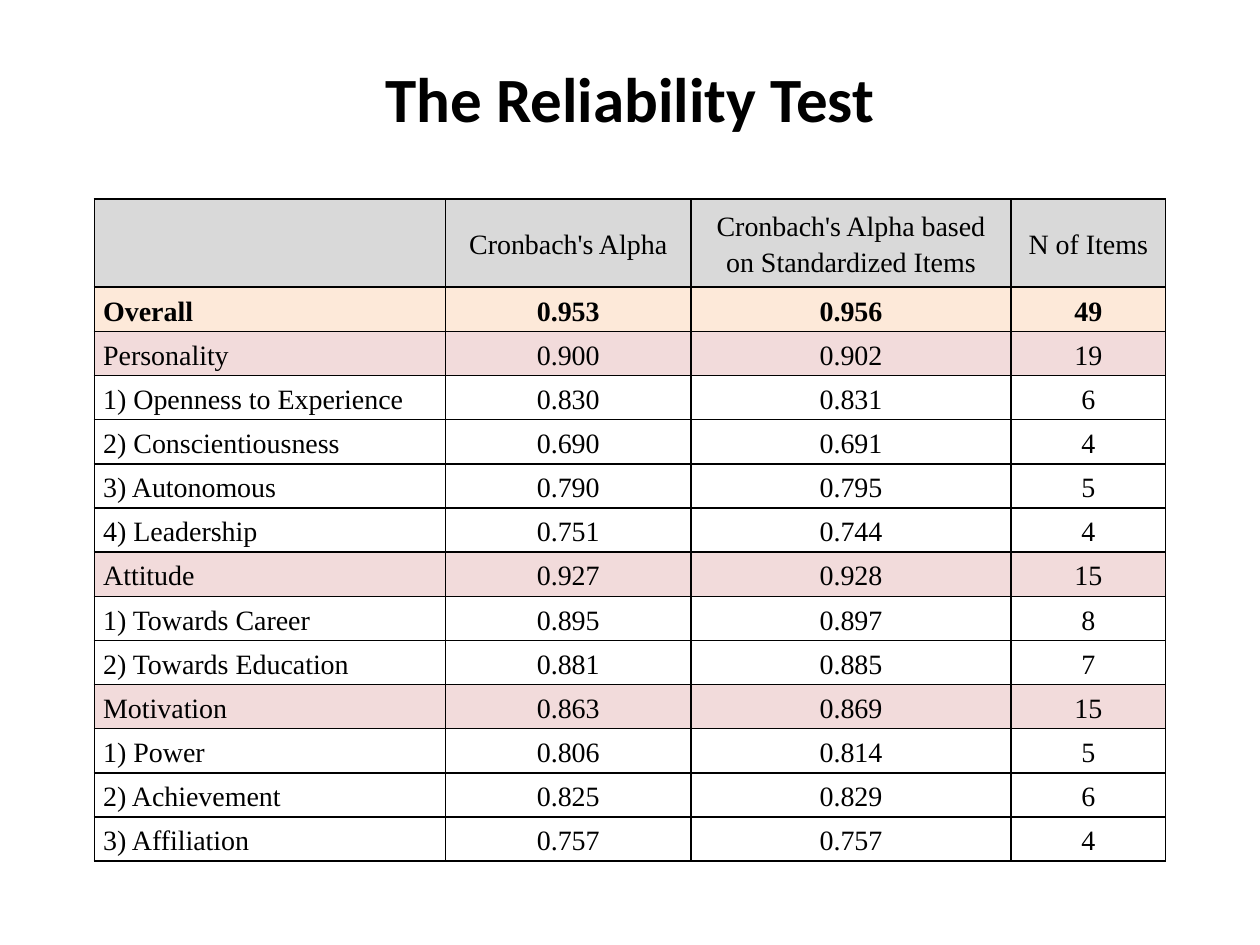
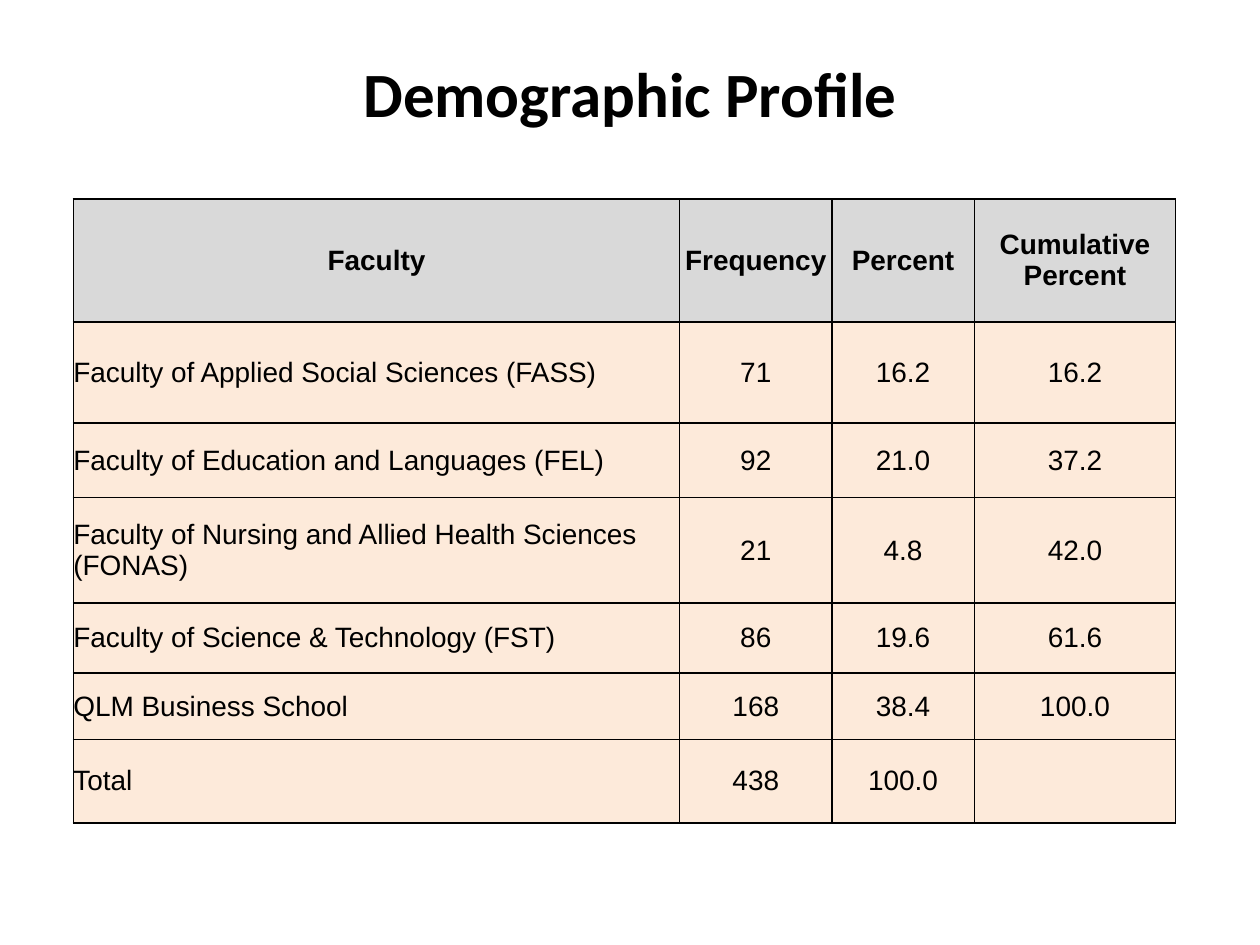
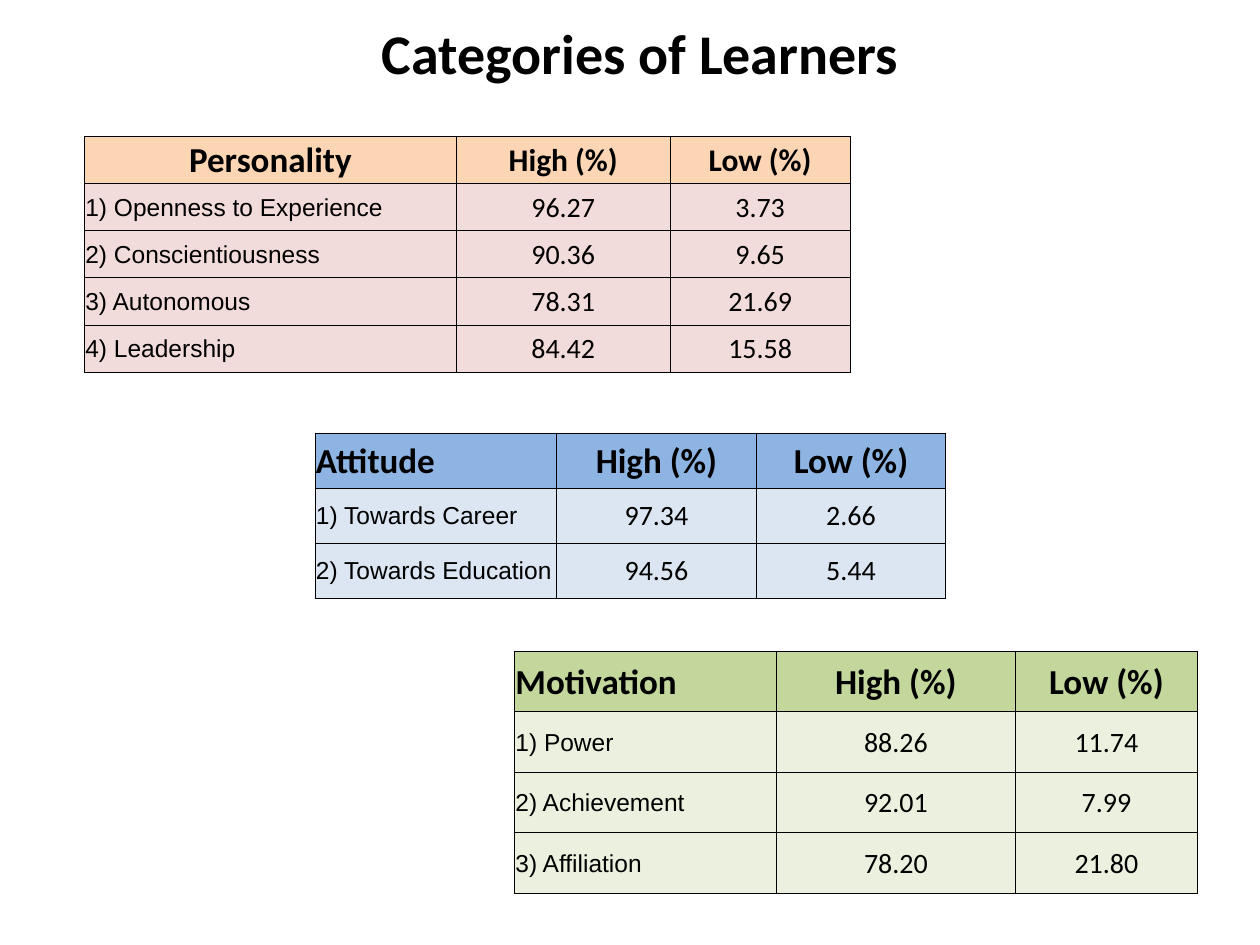
from dataclasses import dataclass

from lxml.etree import SubElement
from pptx import Presentation
from pptx.dml.color import RGBColor
from pptx.enum.text import MSO_ANCHOR as Anchor, PP_ALIGN as Align
from pptx.oxml.ns import qn
from pptx.util import Cm, Pt


@dataclass(frozen=True)
class Theme:
    ink: str = "000000"
    header_grey: str = "D9D9D9"
    overall: str = "FDE9D9"
    construct: str = "F2DBDB"
    faculty: str = "FDEADA"
    personality: tuple = ("FCD5B5", "F2DCDB")
    attitude: tuple = ("8EB4E3", "DCE6F2")
    motivation: tuple = ("C3D69B", "EBF1DE")
    sans: str = "Calibri"
    grotesque: str = "Arial"
    serif: str = "Times New Roman"
    title: int = 36
    compact_title: int = 32
    large: int = 20
    medium: int = 18
    body: int = 16
    small: int = 14


THEME = Theme()


@dataclass(frozen=True)
class TextStyle:
    font: str
    size: int
    bold: bool = False
    align: Align = Align.CENTER


@dataclass(frozen=True)
class TableLook:
    corner: TextStyle
    heading: TextStyle
    label: TextStyle
    value: TextStyle
    margins: tuple
    border: float
    line_spacing: float = 1.0

    def style_at(self, row, column):
        if row == 0:
            return self.heading if column else self.corner
        return self.value if column else self.label


def category_look(heading_size, corner_align):
    return TableLook(
        corner=TextStyle(THEME.sans, THEME.large, True, corner_align),
        heading=TextStyle(THEME.sans, heading_size, True),
        label=TextStyle(THEME.grotesque, THEME.small, align=Align.LEFT),
        value=TextStyle(THEME.sans, THEME.body),
        margins=(0.02, 0.02, 0.02, 0),
        border=0.5,
    )


SERIF_VALUE = TextStyle(THEME.serif, THEME.body)
RELIABILITY_LOOK = TableLook(
    corner=SERIF_VALUE,
    heading=SERIF_VALUE,
    label=TextStyle(THEME.serif, THEME.body, align=Align.LEFT),
    value=SERIF_VALUE,
    margins=(0.18, 0, 0.18, 0),
    border=1,
    line_spacing=1.15,
)

FACULTY_HEADING = TextStyle(THEME.grotesque, THEME.body, True)
FACULTY_LOOK = TableLook(
    corner=FACULTY_HEADING,
    heading=FACULTY_HEADING,
    label=TextStyle(THEME.grotesque, THEME.body, align=Align.LEFT),
    value=TextStyle(THEME.grotesque, THEME.body),
    margins=(0, 0, 0, 0),
    border=1,
)

RELIABILITY = [
    ("", "Cronbach's Alpha", "Cronbach's Alpha based on Standardized Items", "N of Items"),
    ("Overall", "0.953", "0.956", "49"),
    ("Personality", "0.900", "0.902", "19"),
    ("1) Openness to Experience", "0.830", "0.831", "6"),
    ("2) Conscientiousness", "0.690", "0.691", "4"),
    ("3) Autonomous", "0.790", "0.795", "5"),
    ("4) Leadership", "0.751", "0.744", "4"),
    ("Attitude", "0.927", "0.928", "15"),
    ("1) Towards Career", "0.895", "0.897", "8"),
    ("2) Towards Education", "0.881", "0.885", "7"),
    ("Motivation", "0.863", "0.869", "15"),
    ("1) Power", "0.806", "0.814", "5"),
    ("2) Achievement", "0.825", "0.829", "6"),
    ("3) Affiliation", "0.757", "0.757", "4"),
]

RELIABILITY_FILLS = {
    "": THEME.header_grey,
    "Overall": THEME.overall,
    "Personality": THEME.construct,
    "Attitude": THEME.construct,
    "Motivation": THEME.construct,
}

FACULTIES = [
    ("Faculty", "Frequency", "Percent", "Cumulative Percent"),
    ("Faculty of Applied Social Sciences (FASS)", "71", "16.2", "16.2"),
    ("Faculty of Education and Languages (FEL)", "92", "21.0", "37.2"),
    ("Faculty of Nursing and Allied Health Sciences (FONAS)", "21", "4.8", "42.0"),
    ("Faculty of Science & Technology (FST)", "86", "19.6", "61.6"),
    ("QLM Business School", "168", "38.4", "100.0"),
    ("Total", "438", "100.0", ""),
]

PERSONALITY = [
    ("1) Openness to Experience", "96.27", "3.73"),
    ("2) Conscientiousness", "90.36", "9.65"),
    ("3) Autonomous", "78.31", "21.69"),
    ("4) Leadership", "84.42", "15.58"),
]
MOTIVATION = [
    ("1) Power", "88.26", "11.74"),
    ("2) Achievement", "92.01", "7.99"),
    ("3) Affiliation", "78.20", "21.80"),
]
ATTITUDE = [
    ("1) Towards Career", "97.34", "2.66"),
    ("2) Towards Education", "94.56", "5.44"),
]


def write(paragraph, text, style, bold=False):
    paragraph.alignment = style.align
    if not text:
        return
    run = paragraph.add_run()
    run.text = text
    run.font.name = style.font
    run.font.size = Pt(style.size)
    run.font.bold = style.bold or bold
    run.font.color.rgb = RGBColor.from_string(THEME.ink)


def add_titled_slide(deck, title, left, top, height, size):
    slide = deck.slides.add_slide(deck.slide_layouts[5])
    heading = slide.shapes.title
    heading.left, heading.top = Cm(left), Cm(top)
    heading.width, heading.height = Cm(22.86), Cm(height)
    heading.text_frame.vertical_anchor = Anchor.MIDDLE
    write(heading.text_frame.paragraphs[0], title, TextStyle(THEME.sans, size, True))
    return slide


def outline_cell(cell, width):
    properties = cell._tc.get_or_add_tcPr()
    for side in ("a:lnL", "a:lnR", "a:lnT", "a:lnB"):
        line = SubElement(properties, qn(side), w=str(Pt(width)))
        fill = SubElement(line, qn("a:solidFill"))
        SubElement(fill, qn("a:srgbClr"), val=THEME.ink)


def format_cell(cell, text, style, look, fill, bold):
    outline_cell(cell, look.border)
    if fill:
        cell.fill.solid()
        cell.fill.fore_color.rgb = RGBColor.from_string(fill)
    else:
        cell.fill.background()
    cell.vertical_anchor = Anchor.MIDDLE
    cell.margin_left, cell.margin_top, cell.margin_right, cell.margin_bottom = map(Cm, look.margins)
    paragraph = cell.text_frame.paragraphs[0]
    paragraph.line_spacing = look.line_spacing
    write(paragraph, text, style, bold)


def add_grid(slide, left, top, widths, heights, rows, look, fills, bold_label=None):
    frame = slide.shapes.add_table(
        len(rows), len(widths), Cm(left), Cm(top), Cm(sum(widths)), Cm(sum(heights))
    )
    grid = frame.table
    grid.first_row = grid.horz_banding = False
    for column, width in zip(grid.columns, widths):
        column.width = Cm(width)
    for r, (entries, height, fill) in enumerate(zip(rows, heights, fills)):
        grid.rows[r].height = Cm(height)
        for c, text in enumerate(entries):
            format_cell(
                grid.cell(r, c), text, look.style_at(r, c), look, fill, entries[0] == bold_label
            )


def add_category(slide, name, scores, left, top, widths, row_height, colours, look):
    rows = [(name, "High (%)", "Low (%)"), *scores]
    header_fill, score_fill = colours
    fills = [header_fill] + [score_fill] * len(scores)
    add_grid(slide, left, top, widths, [row_height] * len(rows), rows, look, fills)


def add_reliability_slide(deck):
    slide = add_titled_slide(deck, "The Reliability Test", 1.27, 0.76, 2.41, THEME.title)
    heights = [1.78] + [0.89] * (len(RELIABILITY) - 1)
    fills = [RELIABILITY_FILLS.get(row[0]) for row in RELIABILITY]
    add_grid(slide, 1.9, 4.01, (7.08, 4.95, 6.45, 3.12), heights,
             RELIABILITY, RELIABILITY_LOOK, fills, bold_label="Overall")


def add_demographic_slide(deck):
    slide = add_titled_slide(deck, "Demographic Profile", 1.27, 0.76, 2.21, THEME.title)
    heights = (2.48, 2.04, 1.5, 2.13, 1.41, 1.34, 1.68)
    fills = [THEME.header_grey] + [THEME.faculty] * (len(FACULTIES) - 1)
    add_grid(slide, 1.48, 4.01, (12.22, 3.07, 2.87, 4.06), heights,
             FACULTIES, FACULTY_LOOK, fills)


def add_learner_slide(deck):
    slide = add_titled_slide(deck, "Categories of Learners", 1.48, 0, 2.12, THEME.compact_title)
    centred = category_look(THEME.medium, Align.CENTER)
    left_aligned = category_look(THEME.large, Align.LEFT)
    add_category(slide, "Personality", PERSONALITY, 1.7, 2.75, (7.5, 4.31, 3.63), 0.95,
                 THEME.personality, centred)
    add_category(slide, "Motivation", MOTIVATION, 10.37, 13.13, (5.28, 4.82, 3.67), 1.22,
                 THEME.motivation, left_aligned)
    add_category(slide, "Attitude", ATTITUDE, 6.35, 8.73, (4.87, 4.03, 3.81), 1.11,
                 THEME.attitude, left_aligned)


def main():
    deck = Presentation()
    deck.slide_width, deck.slide_height = Cm(25.4), Cm(19.05)
    add_reliability_slide(deck)
    add_demographic_slide(deck)
    add_learner_slide(deck)
    deck.save("out.pptx")


if __name__ == "__main__":
    main()
